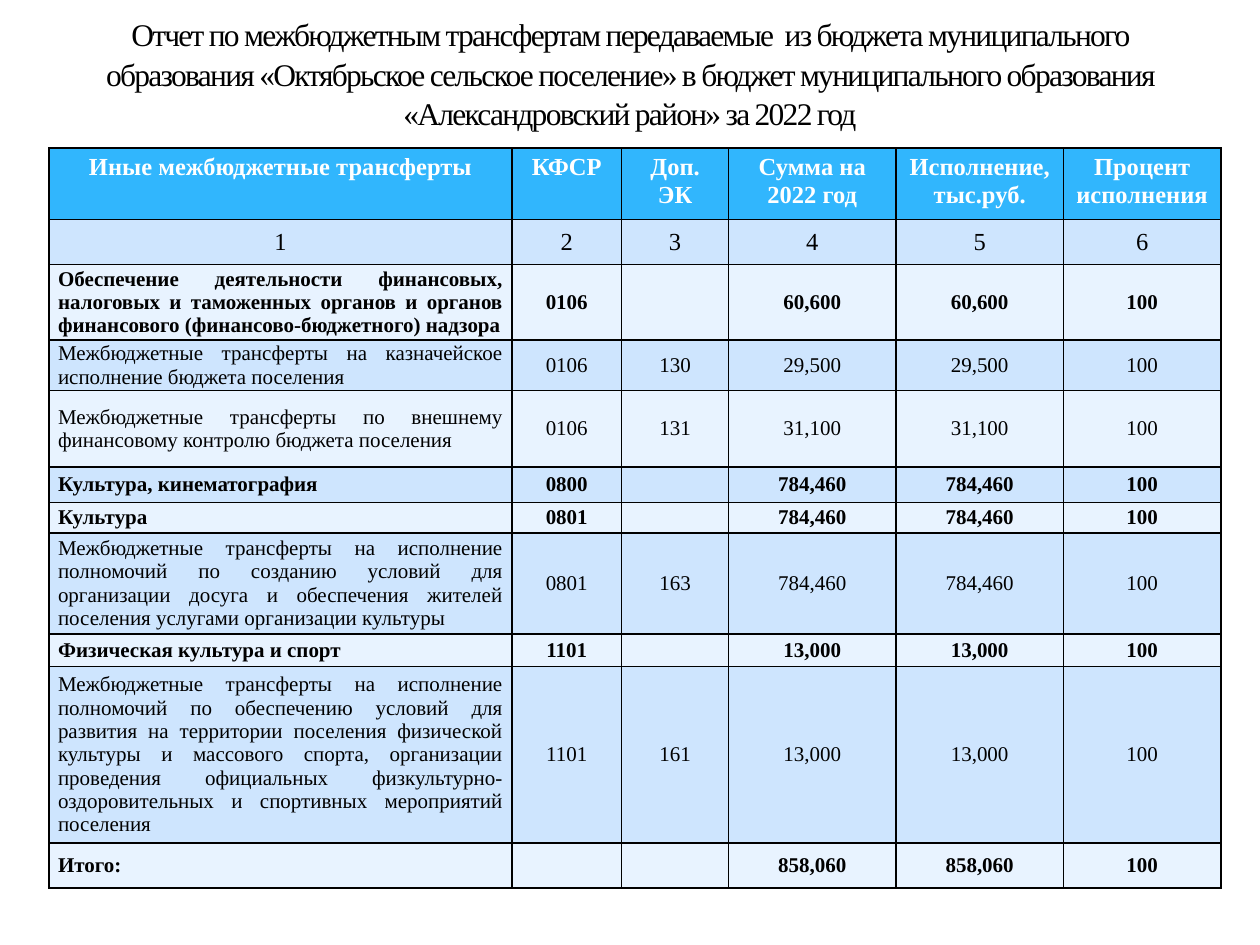
"""Build the slide with the 2022 report on inter-budget transfers."""
from lxml import etree
from pptx import Presentation
from pptx import util as u
from pptx.dml.color import RGBColor
from pptx.enum import text
from pptx.oxml import parse_xml
from pptx.oxml.ns import nsdecls, qn

TITLE = ("Отчет по межбюджетным трансфертам передаваемые  из бюджета муниципального образования "
         "«Октябрьское сельское поселение» в бюджет муниципального образования "
         "«Александровский район» за 2022 год")
HEADER = ["Иные межбюджетные трансферты", "КФСР", "Доп. ЭК", "Сумма на 2022 год",
          "Исполнение, тыс.руб.", "Процент исполнения"]
TRANSFERS = [
    ("Обеспечение деятельности финансовых, налоговых и таможенных органов и органов "
     "финансового (финансово-бюджетного) надзора", "0106", "", "60,600", 1.41),
    ("Межбюджетные трансферты на казначейское исполнение бюджета поселения",
     "0106", "130", "29,500", 0.93),
    ("Межбюджетные трансферты по внешнему финансовому контролю бюджета поселения",
     "0106", "131", "31,100", 1.54),
    ("Культура, кинематография", "0800", "", "784,460", 0.72),
    ("Культура", "0801", "", "784,460", 0.61),
    ("Межбюджетные трансферты на исполнение полномочий по созданию условий для организации "
     "досуга и обеспечения жителей поселения услугами организации культуры",
     "0801", "163", "784,460", 1.88),
    ("Физическая культура и спорт", "1101", "", "13,000", 0.66),
    ("Межбюджетные трансферты на исполнение полномочий по обеспечению условий для развития на "
     "территории поселения физической культуры и массового спорта, организации проведения "
     "официальных физкультурно-оздоровительных и спортивных мероприятий поселения",
     "1101", "161", "13,000", 3.29),
    ("Итого:", "", "", "858,060", 0.91),
]
PERCENT = "100"
COL_WIDTHS = [9.33, 2.21, 2.16, 3.37, 3.38, 3.17]
HEADER_HEIGHT, NUMBER_HEIGHT = 1.39, 0.91
COLORS = {"header": "31B6FD", "odd": "CEE5FE", "even": "E8F3FF",
          "black": "000000", "white": "FFFFFF", "outline": "AFCCDE"}
FONT = "Times New Roman"
ALIGN, ANCHOR = text.PP_ALIGN, text.MSO_ANCHOR


def write(tf, content, size=12, bold=False, color="black", align=ALIGN.CENTER):
    p = tf.paragraphs[0]
    p.alignment = align
    if not content:
        p.font.size = u.Pt(size)
        return p, None
    r = p.add_run()
    r.text = content
    r.font.name, r.font.size, r.font.bold = FONT, u.Pt(size), bold
    r.font.color.rgb = RGBColor.from_string(COLORS[color])
    return p, r


def add_borders(cell):
    tc_pr = cell._tc.get_or_add_tcPr()
    for i, side in enumerate(("lnL", "lnR", "lnT", "lnB")):
        ln = parse_xml(f'<a:{side} {nsdecls("a")} w="12700"><a:solidFill>'
                       f'<a:srgbClr val="{COLORS["black"]}"/></a:solidFill></a:{side}>')
        tc_pr.insert(i, ln)


def add_title(s):
    sp = s.shapes.add_textbox(u.Cm(1.27), u.Cm(0.43), u.Cm(22.86), u.Cm(2.36))
    tf = sp.text_frame
    tf.word_wrap = True
    tf.vertical_anchor = ANCHOR.BOTTOM
    p, r = write(tf, TITLE, size=18)
    p.line_spacing = 1.05
    r_pr = r.font._element
    r_pr.set("spc", "-100")
    ln = etree.Element(qn("a:ln"), w="3175")
    fill = etree.SubElement(ln, qn("a:solidFill"))
    clr = etree.SubElement(fill, qn("a:srgbClr"), val=COLORS["outline"])
    etree.SubElement(clr, qn("a:alpha"), val="25000")
    r_pr.insert(0, ln)


def add_report(s):
    numbers = [str(i + 1) for i in range(len(HEADER))]
    rows = [HEADER, numbers] + [[name, code, extra, total, total, PERCENT]
                                for name, code, extra, total, _ in TRANSFERS]
    heights = [HEADER_HEIGHT, NUMBER_HEIGHT] + [t[-1] for t in TRANSFERS]
    table = s.shapes.add_table(len(rows), len(HEADER), u.Cm(0.99), u.Cm(2.98),
                               u.Cm(sum(COL_WIDTHS)), u.Cm(sum(heights))).table
    for col, width in zip(table.columns, COL_WIDTHS):
        col.width = u.Cm(width)
    for i, (row, height) in enumerate(zip(rows, heights)):
        table.rows[i].height = u.Cm(height)
        for j, value in enumerate(row):
            cell = table.cell(i, j)
            cell.fill.solid()
            band = "header" if i == 0 else "odd" if i % 2 else "even"
            cell.fill.fore_color.rgb = RGBColor.from_string(COLORS[band])
            cell.vertical_anchor = ANCHOR.MIDDLE if i else ANCHOR.TOP
            add_borders(cell)
            if i < 2:
                write(cell.text_frame, value, size=14, bold=i == 0,
                      color="black" if i else "white")
                continue
            cell.margin_left = cell.margin_right = u.Cm(0.18)
            cell.margin_top = cell.margin_bottom = 0
            write(cell.text_frame, value, bold=not row[2],
                  align=ALIGN.CENTER if j else ALIGN.JUSTIFY)


def main():
    prs = Presentation()
    prs.slide_width, prs.slide_height = u.Cm(25.4), u.Cm(19.05)
    s = prs.slides.add_slide(prs.slide_layouts[6])
    add_title(s)
    add_report(s)
    prs.save("out.pptx")


if __name__ == "__main__":
    main()
